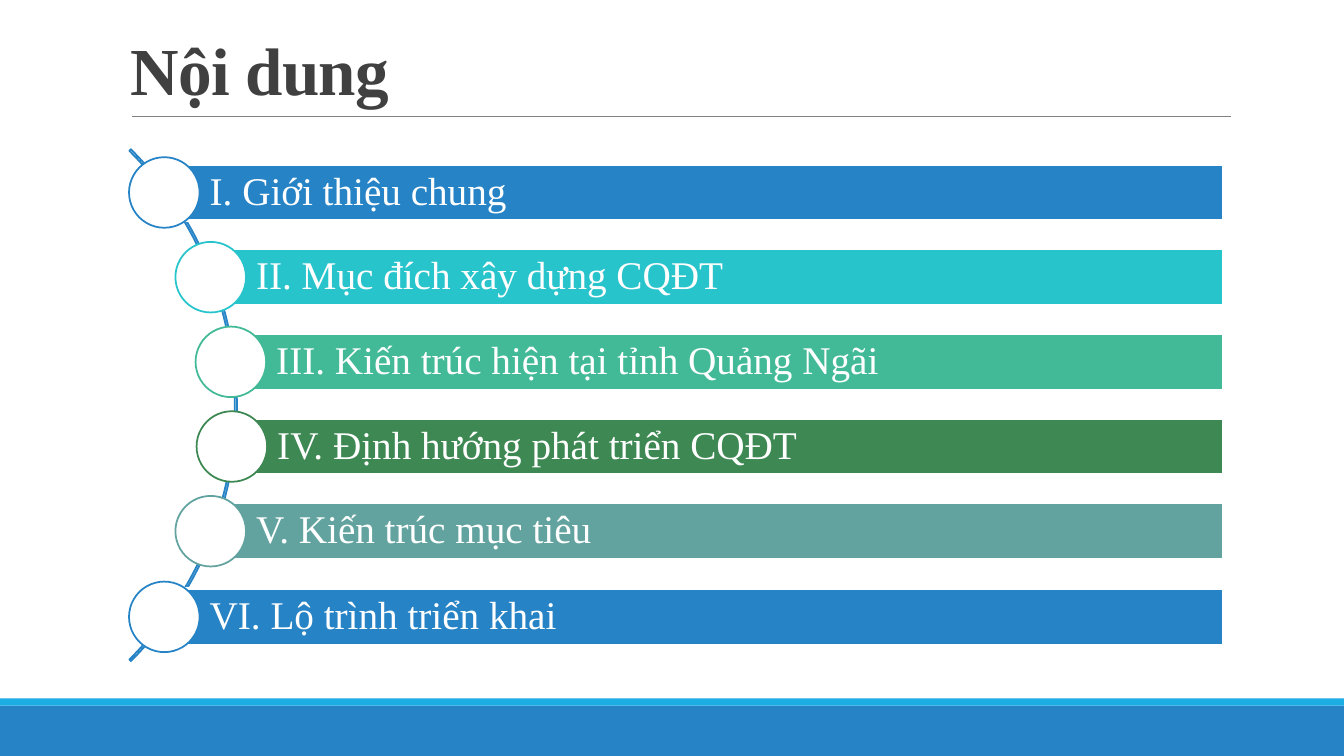
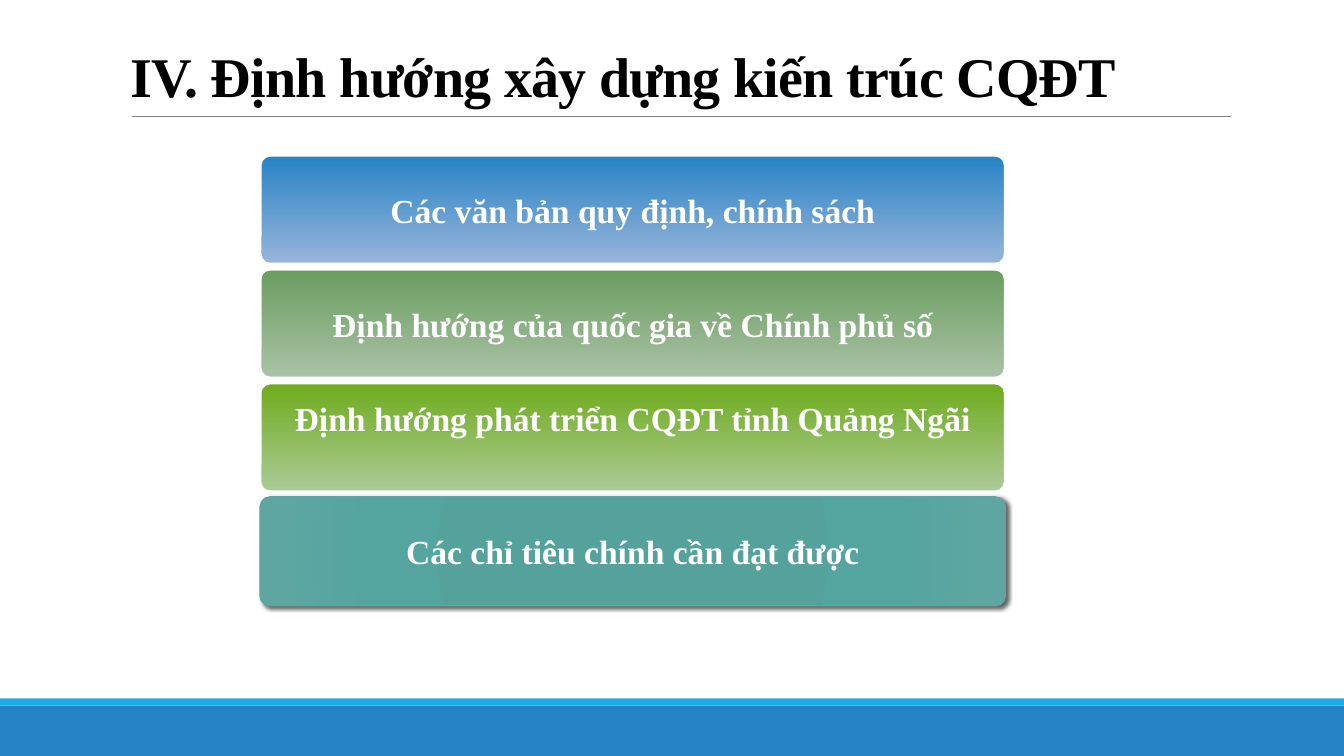
"""Build two slides: a contents list along an arc and a stack of four topics."""
from dataclasses import dataclass
from math import sqrt

from lxml.etree import SubElement
from pptx import Presentation
from pptx.dml.color import RGBColor
from pptx.enum.shapes import MSO_CONNECTOR, MSO_SHAPE
from pptx.enum.text import MSO_ANCHOR, PP_ALIGN
from pptx.oxml.ns import qn
from pptx.util import Emu, Pt

PX = 9144
WIDTH, HEIGHT = 1333, 750
FONT = "Times New Roman"
COLORS = {
    "white": "FFFFFF", "black": "000000", "ink": "404040", "rule": "808080",
    "blue": "2683C6", "sky": "1CADE4", "cyan": "28C4CC", "mint": "42BA97",
    "green": "3E8853", "teal": "62A39F", "blue_light": "99B5D9",
    "sage": "699D5F", "sage_light": "AAC2A6",
    "lime": "6EAC1C", "lime_light": "ACCA98",
    "sea": "52A19C", "sea_2": "55A19C", "sea_3": "54A5A0", "sea_light": "5FA6A2",
}


@dataclass(frozen=True)
class Box:
    left: int
    top: int
    width: int
    height: int

    def emu(self) -> list[Emu]:
        return [px(v) for v in (self.left, self.top, self.width, self.height)]


@dataclass(frozen=True)
class Entry:
    text: str
    color: str


@dataclass(frozen=True)
class Topic:
    text: str
    stops: tuple[tuple[int, str], ...]
    line: str = "white"
    line_pt: float = 2
    bottom_inset: int = 5
    raised: bool = False


ENTRIES = (
    Entry("I. Giới thiệu chung", "blue"),
    Entry("II. Mục đích xây dựng CQĐT", "cyan"),
    Entry("III. Kiến trúc hiện tại tỉnh Quảng Ngãi", "mint"),
    Entry("IV. Định hướng phát triển CQĐT", "green"),
    Entry("V. Kiến trúc mục tiêu", "teal"),
    Entry("VI. Lộ trình triển khai", "blue"),
)
TOPICS = (
    Topic("Các văn bản quy định, chính sách", ((0, "blue"), (100, "blue_light"))),
    Topic("Định hướng của quốc gia về Chính phủ số", ((0, "sage"), (100, "sage_light"))),
    Topic("Định hướng phát triển CQĐT tỉnh Quảng Ngãi",
          ((0, "lime"), (100, "lime_light")), bottom_inset=43),
    Topic("Các chỉ tiêu chính cần đạt được",
          ((0, "sea"), (34, "sea_2"), (70, "sea_3"), (100, "sea_light")),
          line="teal", line_pt=1, raised=True),
)


def px(n: int) -> Emu:
    return Emu(n * PX)


def rgb(name: str) -> RGBColor:
    return RGBColor.from_string(COLORS[name])


def add_shape(s, kind, box: Box, fill: str = "", line: str = "", line_pt: float = 1):
    sp = s.shapes.add_shape(kind, *box.emu())
    sp.shadow.inherit = False
    if fill:
        sp.fill.solid()
        sp.fill.fore_color.rgb = rgb(fill)
    else:
        sp.fill.background()
    if line:
        sp.line.color.rgb = rgb(line)
        sp.line.width = Pt(line_pt)
    else:
        sp.line.fill.background()
    return sp


def add_run(p, text: str, size: int, color: str, bold: bool = False):
    r = p.add_run()
    r.text = text
    r.font.name = FONT
    r.font.size = Pt(size)
    r.font.bold = bold
    r.font.color.rgb = rgb(color)
    return r


def set_gradient(sp, stops: tuple[tuple[int, str], ...], radial: bool) -> None:
    sp.fill.gradient()
    grad = sp._element.spPr.find(qn("a:gradFill"))
    for child in list(grad):
        grad.remove(child)
    gs_lst = SubElement(grad, qn("a:gsLst"))
    for pos, color in stops:
        gs = SubElement(gs_lst, qn("a:gs"), pos=str(pos * 1000))
        SubElement(gs, qn("a:srgbClr"), val=COLORS[color])
    if radial:
        circle = SubElement(grad, qn("a:path"), {"path": "circle"})
        SubElement(circle, qn("a:fillToRect"), {side: "100000" for side in "ltrb"})
    else:
        SubElement(grad, qn("a:lin"), ang="5400000", scaled="0")


def set_shadow(sp) -> None:
    effects = sp._element.spPr.find(qn("a:effectLst"))
    shadow = SubElement(effects, qn("a:outerShdw"), blurRad=str(Pt(3)), dist=str(Pt(2)),
                        dir="2700000", algn="tl", rotWithShape="0")
    color = SubElement(shadow, qn("a:srgbClr"), val=COLORS["black"])
    SubElement(color, qn("a:alpha"), val="60000")


def add_slide(prs, title: str, size: int, color: str, title_width: int):
    s = prs.slides.add_slide(prs.slide_layouts[6])
    add_shape(s, MSO_SHAPE.RECTANGLE, Box(0, 700, WIDTH, 50), "blue")
    add_shape(s, MSO_SHAPE.RECTANGLE, Box(0, 693, WIDTH, 7), "sky")
    rule = s.shapes.add_connector(MSO_CONNECTOR.STRAIGHT, px(131), px(115), px(1221), px(115))
    rule.line.color.rgb = rgb("rule")
    rule.line.width = Pt(0.5)
    SubElement(rule._element.spPr, qn("a:effectLst"))
    tf = s.shapes.add_textbox(*Box(120, 31, title_width, 82).emu()).text_frame
    tf.word_wrap = True
    tf.vertical_anchor = MSO_ANCHOR.BOTTOM
    p = tf.paragraphs[0]
    p.line_spacing = 0.85
    r = add_run(p, title, size, color, bold=True)
    r.font._element.set("spc", "-50")
    return s


def add_entry(s, entry: Entry, left: int, top: int) -> None:
    bar = add_shape(s, MSO_SHAPE.RECTANGLE, Box(left, top, 1213 - left, 56),
                    entry.color, "white", 2)
    tf = bar.text_frame
    tf.word_wrap = True
    tf.vertical_anchor = MSO_ANCHOR.MIDDLE
    tf.margin_left = px(45)
    tf.margin_top = tf.margin_right = tf.margin_bottom = px(8)
    p = tf.paragraphs[0]
    p.alignment = PP_ALIGN.LEFT
    p.line_spacing = 0.9
    add_run(p, entry.text, 28, "white")
    add_shape(s, MSO_SHAPE.OVAL, Box(left - 35, top - 7, 70, 70), "white", entry.color, 1.25)


def add_contents(prs) -> None:
    s = add_slide(prs, "Nội dung", 48, "ink", 1100)
    arc = add_shape(s, MSO_SHAPE.BLOCK_ARC, Box(-483, 43, 718, 718), line="blue", line_pt=1.25)
    for i, value in enumerate((189, 27, 0.003)):
        arc.adjustments[i] = value
    center_x, center_y, radius = -124, 402, 356
    for i, entry in enumerate(ENTRIES):
        top = 163 + 842 * i // 10
        rise = top + 28 - center_y
        add_entry(s, entry, center_x + round(sqrt(radius ** 2 - rise ** 2)), top)


def add_topics(prs) -> None:
    s = add_slide(prs, "IV. Định hướng xây dựng kiến trúc CQĐT", 40, "black", 1134)
    for i, topic in enumerate(TOPICS):
        sp = add_shape(s, MSO_SHAPE.ROUNDED_RECTANGLE, Box(258, 154 + 113 * i, 739, 108),
                       line=topic.line, line_pt=topic.line_pt)
        sp.adjustments[0] = 0.09
        set_gradient(sp, topic.stops, radial=topic.raised)
        if topic.raised:
            set_shadow(sp)
        tf = sp.text_frame
        tf.word_wrap = False
        tf.vertical_anchor = MSO_ANCHOR.MIDDLE
        tf.margin_bottom = px(topic.bottom_inset)
        p = tf.paragraphs[0]
        p.alignment = PP_ALIGN.CENTER
        add_run(p, topic.text, 24, "white", bold=True)


def main() -> None:
    prs = Presentation()
    prs.slide_width, prs.slide_height = px(WIDTH), px(HEIGHT)
    add_contents(prs)
    add_topics(prs)
    prs.save("out.pptx")


if __name__ == "__main__":
    main()
